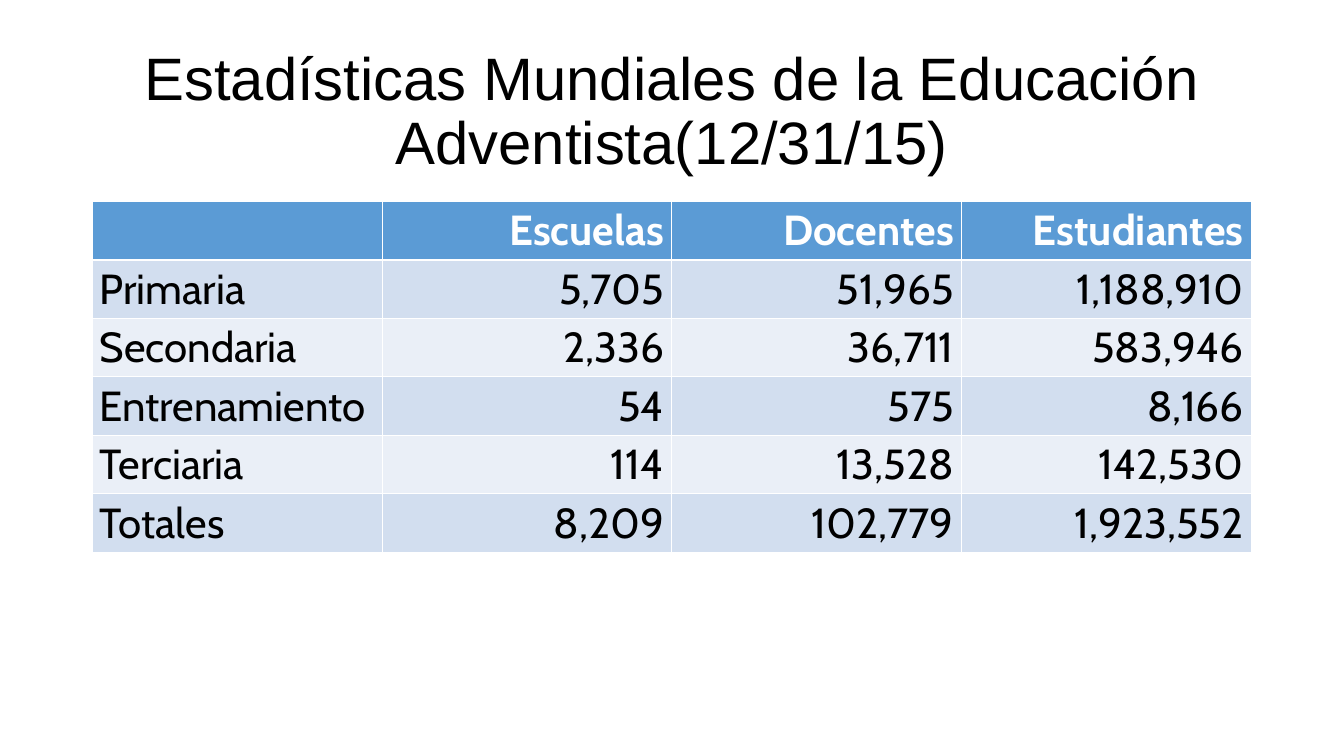
from dataclasses import dataclass

from lxml.etree import SubElement
from pptx import Presentation
from pptx.dml.color import RGBColor
from pptx.enum.text import MSO_ANCHOR, PP_ALIGN
from pptx.oxml.ns import qn
from pptx.table import _Cell
from pptx.text.text import TextFrame
from pptx.util import Cm, Pt

BLACK = RGBColor(0x00, 0x00, 0x00)
WHITE = RGBColor(0xFF, 0xFF, 0xFF)
HEADER_BLUE = RGBColor(0x5B, 0x9B, 0xD5)
BAND_DARK = RGBColor(0xD2, 0xDE, 0xEF)
BAND_LIGHT = RGBColor(0xEA, 0xEF, 0xF7)

LEFT = Cm(3.1)
WIDTH = Cm(38.94)
ROW_HEIGHT = Cm(1.95)
TITLE = "Estadísticas Mundiales de la Educación Adventista(12/31/15)"
HEADINGS = ("", "Escuelas", "Docentes", "Estudiantes")


@dataclass(frozen=True)
class Level:
    name: str
    schools: int
    teachers: int
    students: int

    def texts(self) -> tuple[str, ...]:
        counts = (self.schools, self.teachers, self.students)
        return (self.name, *(f"{count:,}" for count in counts))


LEVELS = (
    Level("Primaria", 5705, 51965, 1188910),
    Level("Secondaria", 2336, 36711, 583946),
    Level("Entrenamiento", 54, 575, 8166),
    Level("Terciaria", 114, 13528, 142530),
    Level("Totales", 8209, 102779, 1923552),
)


def write_text(frame: TextFrame, text: str, *, font: str, size: float,
               color: RGBColor, bold: bool = False,
               align: PP_ALIGN = PP_ALIGN.LEFT, spacing: float = 1.0) -> None:
    para = frame.paragraphs[0]
    para.alignment = align
    para.line_spacing = spacing
    para.font.size = Pt(size)
    if text:
        span = para.add_run()
        span.text = text
        span.font.name = font
        span.font.size = Pt(size)
        span.font.bold = bold
        span.font.color.rgb = color


def set_borders(cell: _Cell, bottom: float) -> None:
    properties = cell._tc.get_or_add_tcPr()
    for side, width in (("L", 1), ("R", 1), ("T", 1), ("B", bottom)):
        line = SubElement(properties, qn(f"a:ln{side}"), w=str(Pt(width)))
        fill = SubElement(line, qn("a:solidFill"))
        SubElement(fill, qn("a:srgbClr"), val=str(WHITE))


def draw_title(page) -> None:
    box = page.shapes.add_textbox(LEFT, Cm(1.35), WIDTH, Cm(4.9))
    frame = box.text_frame
    frame.word_wrap = True
    frame.vertical_anchor = MSO_ANCHOR.MIDDLE
    frame.margin_left = frame.margin_right = Cm(0.4)
    frame.margin_top = frame.margin_bottom = Cm(0.2)
    write_text(frame, TITLE, font="Arial", size=57, color=BLACK,
               align=PP_ALIGN.CENTER, spacing=0.9)


def draw_table(page) -> None:
    rows = (HEADINGS, *(level.texts() for level in LEVELS))
    table = page.shapes.add_table(
        len(rows), len(HEADINGS), LEFT, Cm(6.76), WIDTH, ROW_HEIGHT * len(rows)
    ).table
    for row_index, texts in enumerate(rows):
        header = row_index == 0
        band = BAND_DARK if row_index % 2 else BAND_LIGHT
        for column_index, text in enumerate(texts):
            cell = table.cell(row_index, column_index)
            set_borders(cell, bottom=3 if header else 1)
            cell.fill.solid()
            cell.fill.fore_color.rgb = HEADER_BLUE if header else band
            write_text(cell.text_frame, text, font="Cabin", size=40,
                       color=WHITE if header else BLACK, bold=header,
                       align=PP_ALIGN.RIGHT if column_index else PP_ALIGN.LEFT)


def main() -> None:
    deck = Presentation()
    deck.slide_width = Cm(45.16)
    deck.slide_height = Cm(25.4)
    page = deck.slides.add_slide(deck.slide_layouts[6])
    draw_table(page)
    draw_title(page)
    deck.save("out.pptx")


if __name__ == "__main__":
    main()
